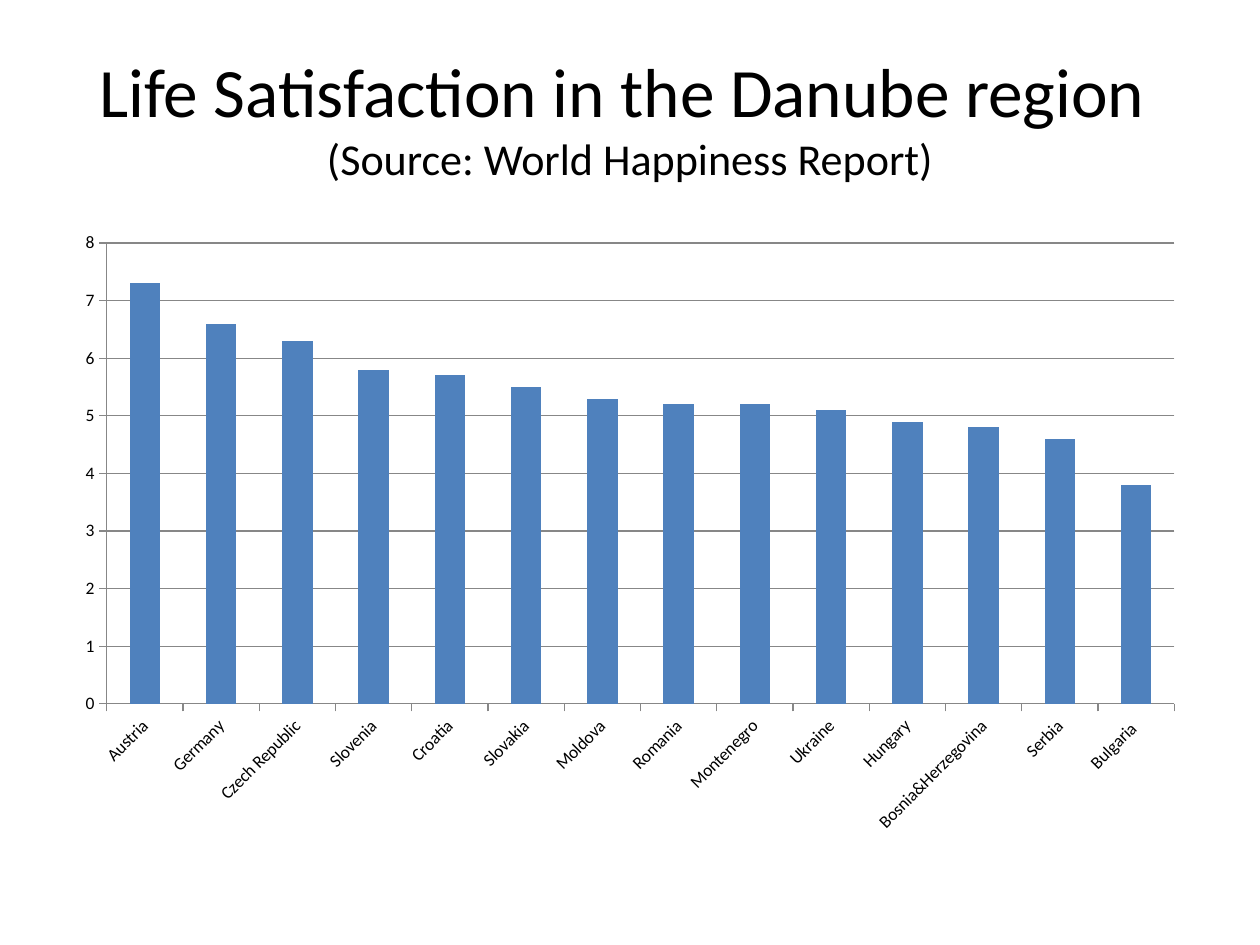
import dataclasses
import typing

import pptx
import pptx.chart.data
import pptx.dml.color
import pptx.enum.chart
import pptx.enum.text
import pptx.util
from pptx.util import Cm


@dataclasses.dataclass(frozen=True)
class Theme:
    font: str = "Calibri"
    text: str = "000000"
    bar: str = "4F81BD"
    line: str = "878787"
    title_size: float = 39.6
    subtitle_size: float = 25.2
    chart_size: float = 10
    line_width: float = 0.75


class Country(typing.NamedTuple):
    name: str
    satisfaction: float


class Box(typing.NamedTuple):
    left: pptx.util.Length
    top: pptx.util.Length
    width: pptx.util.Length
    height: pptx.util.Length


THEME = Theme()
TITLE_BOX = Box(Cm(1.27), Cm(0.76), Cm(22.86), Cm(3.18))
CHART_BOX = Box(Cm(1.27), Cm(4.45), Cm(22.86), Cm(12.57))
COUNTRIES = [
    Country("Austria", 7.3),
    Country("Germany", 6.6),
    Country("Czech Republic", 6.3),
    Country("Slovenia", 5.8),
    Country("Croatia", 5.7),
    Country("Slovakia", 5.5),
    Country("Moldova", 5.3),
    Country("Romania", 5.2),
    Country("Montenegro", 5.2),
    Country("Ukraine", 5.1),
    Country("Hungary", 4.9),
    Country("Bosnia&Herzegovina", 4.8),
    Country("Serbia", 4.6),
    Country("Bulgaria ", 3.8),
]


def rgb(value: str) -> pptx.dml.color.RGBColor:
    return pptx.dml.color.RGBColor.from_string(value)


def format_font(font, *, size: float, color: str = THEME.text) -> None:
    font.name = THEME.font
    font.size = pptx.util.Pt(size)
    font.bold = False
    font.color.rgb = rgb(color)


def add_text(paragraph, text: str, **font_format) -> None:
    run = paragraph.add_run()
    run.text = text
    format_font(run.font, **font_format)


def add_title(slide, box: Box) -> None:
    frame = slide.shapes.add_textbox(*box).text_frame
    frame.word_wrap = True
    frame.vertical_anchor = pptx.enum.text.MSO_ANCHOR.MIDDLE
    paragraph = frame.paragraphs[0]
    paragraph.alignment = pptx.enum.text.PP_ALIGN.CENTER
    add_text(paragraph, "Life Satisfaction in the Danube region ", size=THEME.title_size)
    paragraph.add_line_break()
    add_text(paragraph, "(Source: World Happiness Report)", size=THEME.subtitle_size)


def format_line(line) -> None:
    line.color.rgb = rgb(THEME.line)
    line.width = pptx.util.Pt(THEME.line_width)


def format_axis(axis) -> None:
    axis.major_tick_mark = pptx.enum.chart.XL_TICK_MARK.OUTSIDE
    axis.minor_tick_mark = pptx.enum.chart.XL_TICK_MARK.NONE
    format_line(axis.format.line)
    format_font(axis.tick_labels.font, size=THEME.chart_size)


def add_satisfaction_chart(slide, box: Box, countries: list[Country]) -> None:
    data = pptx.chart.data.CategoryChartData(number_format="General")
    data.categories = [country.name for country in countries]
    data.add_series("Series 1", [country.satisfaction for country in countries])
    chart_type = pptx.enum.chart.XL_CHART_TYPE.COLUMN_CLUSTERED
    chart = slide.shapes.add_chart(chart_type, *box, data).chart
    chart.has_title = False
    chart.has_legend = False
    format_font(chart.font, size=THEME.chart_size)

    plot = chart.plots[0]
    plot.vary_by_categories = False
    plot.gap_width = 150
    fill = plot.series[0].format.fill
    fill.solid()
    fill.fore_color.rgb = rgb(THEME.bar)

    format_axis(chart.category_axis)
    label_body = chart.category_axis._element.txPr.bodyPr
    label_body.set("rot", "-2700000")
    label_body.set("vert", "horz")

    value_axis = chart.value_axis
    format_axis(value_axis)
    value_axis.minimum_scale = 0
    value_axis.maximum_scale = 8
    value_axis.major_unit = 1
    value_axis.has_major_gridlines = True
    format_line(value_axis.major_gridlines.format.line)


def main() -> None:
    presentation = pptx.Presentation()
    presentation.slide_width = Cm(25.4)
    presentation.slide_height = Cm(19.05)
    slide = presentation.slides.add_slide(presentation.slide_layouts[6])
    add_title(slide, TITLE_BOX)
    add_satisfaction_chart(slide, CHART_BOX, COUNTRIES)
    presentation.save("out.pptx")


if __name__ == "__main__":
    main()
